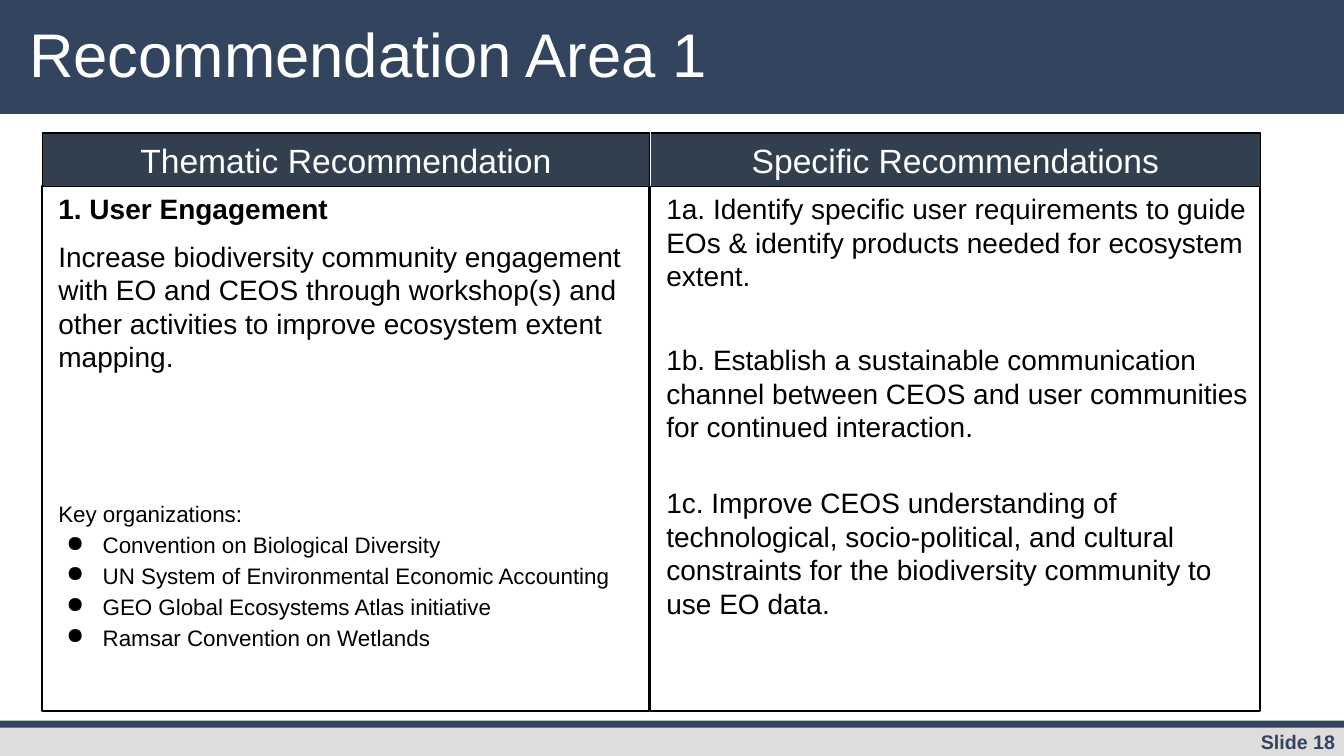
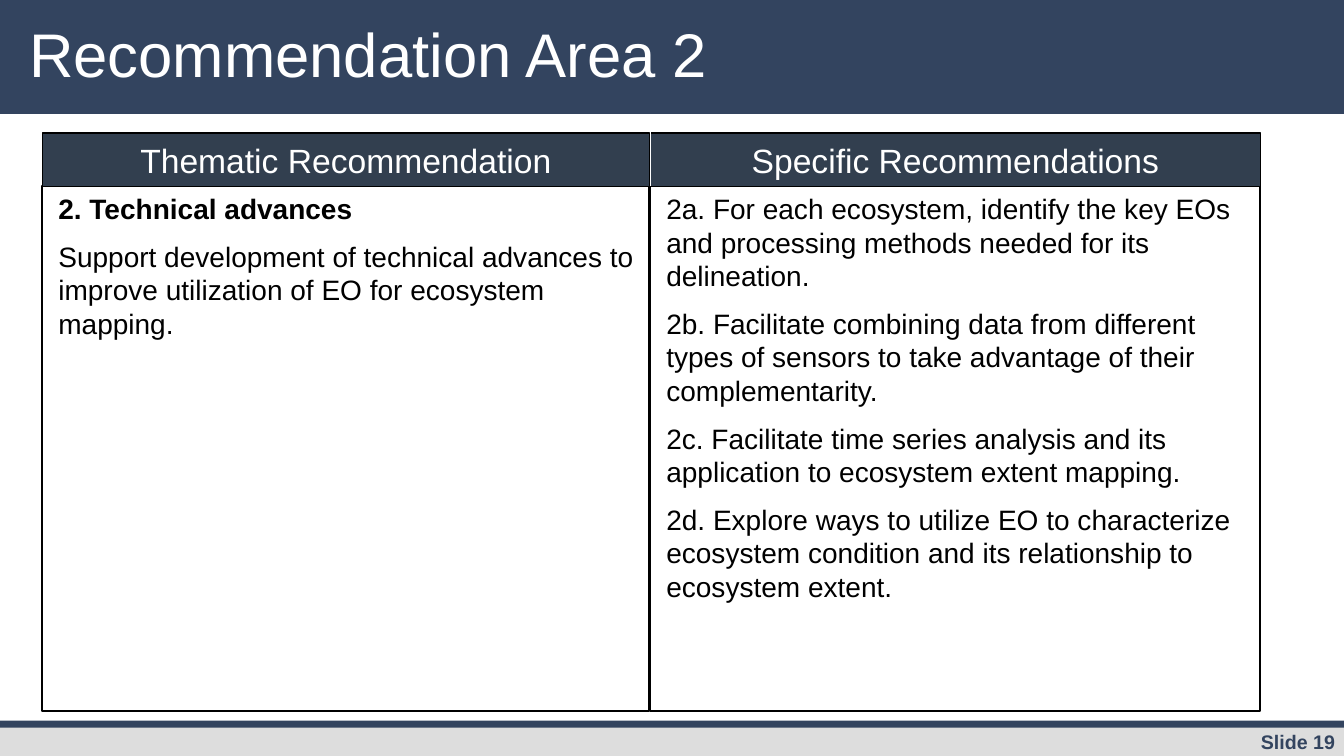
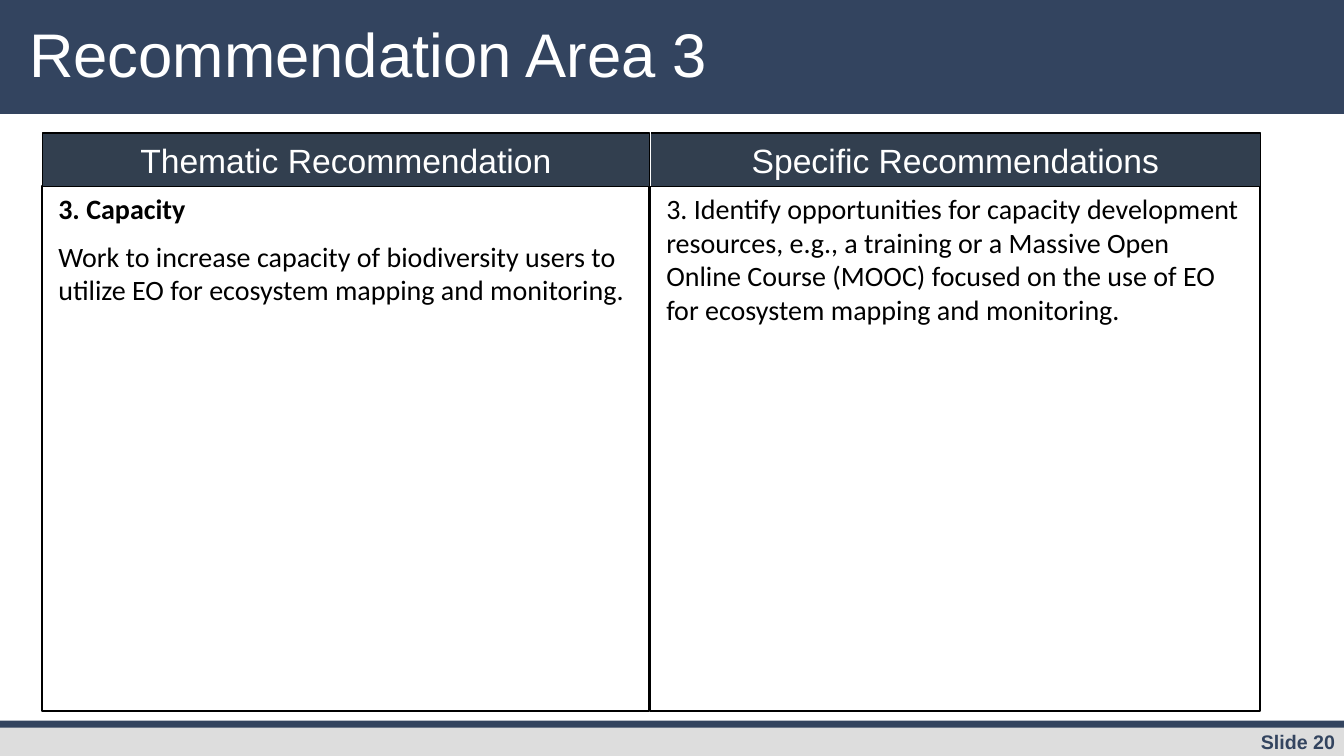
from lxml.etree import SubElement
from pptx import Presentation
from pptx.dml.color import RGBColor
from pptx.enum.shapes import MSO_CONNECTOR, MSO_SHAPE
from pptx.enum.text import MSO_ANCHOR, PP_ALIGN
from pptx.oxml.ns import qn
from pptx.util import Inches, Pt

NAVY, SLATE, GRAY, BLACK, WHITE = "33445F", "323F4F", "DDDDDD", "000000", "FFFFFF"
FIRST_NUMBER = 18
COLUMNS = [
    ("Thematic Recommendation", 0.42, 6.02),
    ("Specific Recommendations", 6.45, 6.05),
]
HEADER_TOP, HEADER_HEIGHT, BODY_HEIGHT = 1.32, 0.53, 5.2
BANDS = [
    (0, 0, 13.33, 1.13, NAVY),
    (0, 7.19, 13.33, 0.31, GRAY),
    (0, 7.15, 13.33, 0.07, NAVY),
]

BODY = {"size": 20, "color": BLACK, "line_spacing": Pt(24), "left": 0.06}
HEADING = {"bold": True}
NEXT = {"before": 10}
SMALL = {"size": 16, "line_spacing": Pt(22)}
BULLET = SMALL | {"left": 0.5, "hanging": -0.36, "bullet": "●"}

AREAS = [
    {
        "font": "Arial",
        "columns": [
            [
                ("1. User Engagement", HEADING),
                ("Increase biodiversity community engagement with EO and CEOS through "
                 "workshop(s) and other activities to improve ecosystem extent mapping.", NEXT),
                ("Key organizations:", SMALL | {"before": 88}),
                ("Convention on Biological Diversity", BULLET),
                ("UN System of Environmental Economic Accounting", BULLET),
                ("GEO Global Ecosystems Atlas initiative", BULLET),
                ("Ramsar Convention on Wetlands", BULLET),
            ],
            [
                ("1a. Identify specific user requirements to guide EOs & identify products "
                 "needed for ecosystem extent.", {}),
                ("1b. Establish a sustainable communication channel between CEOS and user "
                 "communities for continued interaction.", {"before": 36}),
                ("1c. Improve CEOS understanding of technological, socio-political, and cultural "
                 "constraints for the biodiversity community to use EO data.", {"before": 30}),
            ],
        ],
    },
    {
        "font": "Arial",
        "columns": [
            [
                ("2. Technical advances", HEADING),
                ("Support development of technical advances to improve utilization of EO for "
                 "ecosystem mapping.", NEXT),
            ],
            [
                ("2a. For each ecosystem, identify the key EOs and processing methods needed "
                 "for its delineation.", {}),
                ("2b. Facilitate combining data from different types of sensors to take "
                 "advantage of their complementarity.", NEXT),
                ("2c. Facilitate time series analysis and its application to ecosystem extent "
                 "mapping.", NEXT),
                ("2d. Explore ways to utilize EO to characterize ecosystem condition and its "
                 "relationship to ecosystem extent.", NEXT),
            ],
        ],
    },
    {
        "font": "Calibri",
        "columns": [
            [
                ("3. Capacity", HEADING),
                ("Work to increase capacity of biodiversity users to utilize EO for ecosystem "
                 "mapping and monitoring.", NEXT),
            ],
            [
                ("3. Identify opportunities for capacity development resources, e.g., a training "
                 "or a Massive Open Online Course (MOOC) focused on the use of EO for ecosystem "
                 "mapping and monitoring.", {}),
            ],
        ],
    },
]


def rgb(color):
    return RGBColor.from_string(color)


def add_box(slide, left, top, width, height, fill=None, line=None, line_width=1):
    shape = slide.shapes.add_shape(
        MSO_SHAPE.RECTANGLE, Inches(left), Inches(top), Inches(width), Inches(height))
    shape.shadow.inherit = False
    if fill:
        shape.fill.solid()
        shape.fill.fore_color.rgb = rgb(fill)
    else:
        shape.fill.background()
    if line:
        shape.line.color.rgb = rgb(line)
        shape.line.width = Pt(line_width)
    else:
        shape.line.fill.background()
    return shape


def add_text_box(slide, left, top, width, height):
    return slide.shapes.add_textbox(Inches(left), Inches(top), Inches(width), Inches(height))


def write(shape, items, font="Arial", anchor=MSO_ANCHOR.TOP):
    frame = shape.text_frame
    frame.word_wrap = True
    frame.vertical_anchor = anchor
    for index, (text, style) in enumerate(items):
        paragraph = frame.paragraphs[0] if index == 0 else frame.add_paragraph()
        properties = paragraph._p.get_or_add_pPr()
        properties.set("marL", str(Inches(style.get("left", 0))))
        properties.set("indent", str(Inches(style.get("hanging", 0))))
        if "bullet" in style:
            SubElement(properties, qn("a:buChar")).set("char", style["bullet"])
        spacing = {
            "alignment": style.get("alignment", PP_ALIGN.LEFT),
            "line_spacing": style.get("line_spacing", 1.0),
            "space_before": Pt(style.get("before", 0)),
        }
        for name, value in spacing.items():
            setattr(paragraph, name, value)
        run = paragraph.add_run()
        run.text = text
        letters = {"name": font, "size": Pt(style["size"]), "bold": style.get("bold", False)}
        for name, value in letters.items():
            setattr(run.font, name, value)
        run.font.color.rgb = rgb(style["color"])


def add_frame(slide, title, number):
    for left, top, width, height, color in BANDS:
        add_box(slide, left, top, width, height, fill=color)
    write(add_text_box(slide, 11.23, 7.19, 2.11, 0.31), [
        (f"Slide {number}",
         {"size": 14, "color": NAVY, "bold": True, "alignment": PP_ALIGN.RIGHT})])
    write(add_text_box(slide, 0.19, 0.19, 10.27, 0.85), [
        (title, {"size": 44, "color": WHITE, "line_spacing": 0.9})])


def add_columns(slide, area):
    body_top = HEADER_TOP + HEADER_HEIGHT
    header_style = {"size": 24, "color": WHITE, "alignment": PP_ALIGN.CENTER}
    for (header, left, width), items in zip(COLUMNS, area["columns"]):
        body = add_box(slide, left, body_top, width, BODY_HEIGHT, line=BLACK, line_width=1.5)
        write(body, [(text, BODY | style) for text, style in items], area["font"])
        header_box = add_box(slide, left, HEADER_TOP, width, HEADER_HEIGHT, SLATE, BLACK)
        write(header_box, [(header, header_style)], anchor=MSO_ANCHOR.MIDDLE)
    divider_left = Inches(COLUMNS[1][1])
    divider = slide.shapes.add_connector(
        MSO_CONNECTOR.STRAIGHT, divider_left, Inches(1.3), divider_left, Inches(body_top))
    divider.line.color.rgb = rgb(WHITE)
    divider.line.width = Pt(1)
    SubElement(divider._element.spPr, qn("a:effectLst"))


def main():
    presentation = Presentation()
    presentation.slide_width = Inches(13.33)
    presentation.slide_height = Inches(7.5)
    for index, area in enumerate(AREAS):
        slide = presentation.slides.add_slide(presentation.slide_layouts[6])
        add_frame(slide, f"Recommendation Area {index + 1}", FIRST_NUMBER + index)
        add_columns(slide, area)
    presentation.save("out.pptx")


if __name__ == "__main__":
    main()
